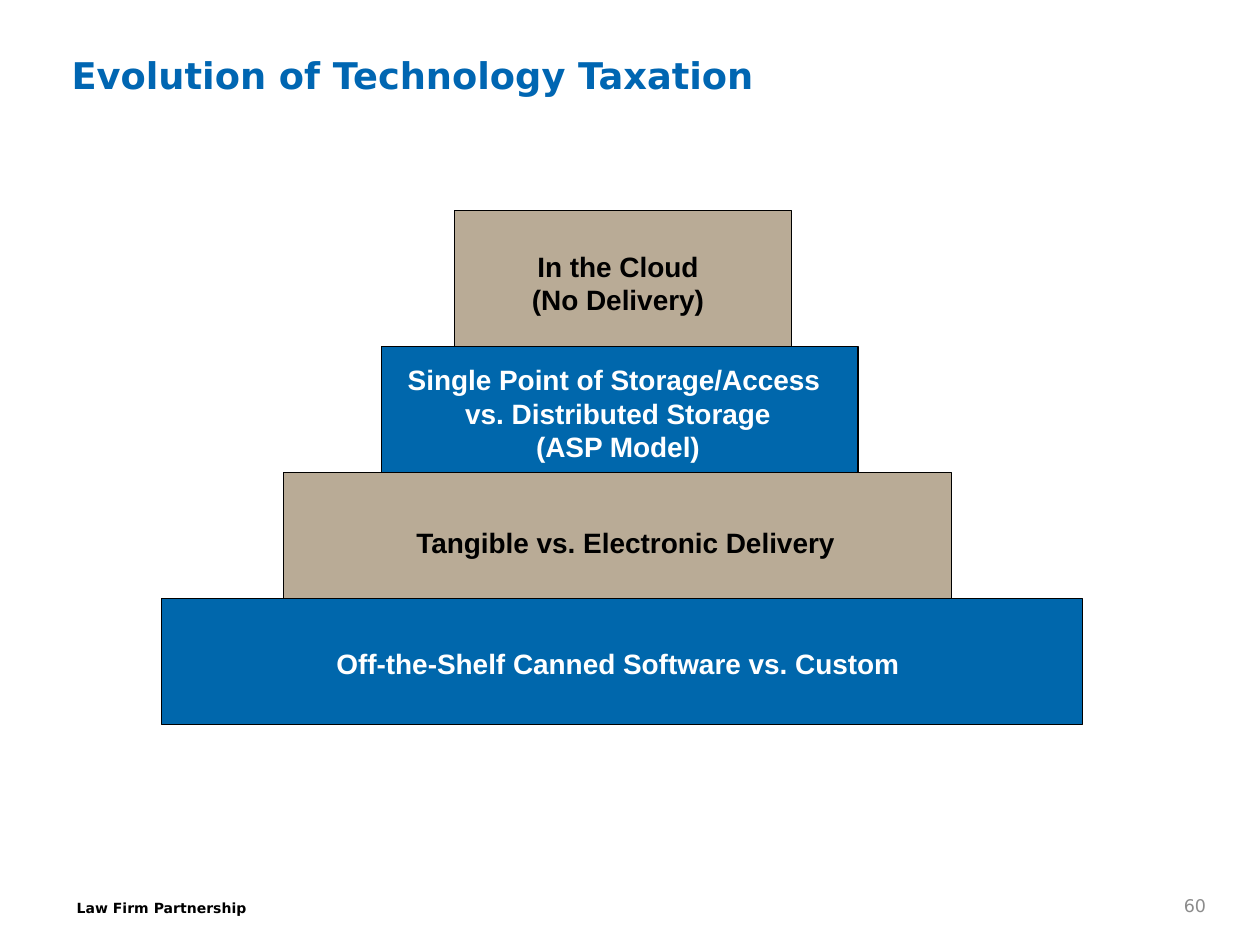
from pptx import Presentation
from pptx.dml.color import RGBColor
from pptx.enum.shapes import MSO_SHAPE
from pptx.enum.text import MSO_ANCHOR, PP_ALIGN
from pptx.util import Inches, Pt

RECTANGLE = MSO_SHAPE.RECTANGLE
TOP, MIDDLE = MSO_ANCHOR.TOP, MSO_ANCHOR.MIDDLE
LEFT, CENTER, RIGHT = PP_ALIGN.LEFT, PP_ALIGN.CENTER, PP_ALIGN.RIGHT

BLACK, WHITE, GREY = "000000", "FFFFFF", "8C8C8C"
TITLE_BLUE, STEP_BLUE, TAN = "0066B2", "0067AC", "B9AB96"


def color(value):
    return RGBColor.from_string(value)


class PageBuilder:
    heading_font = "DejaVu Sans"
    label_font = "Arial"
    label_size = 16

    def __init__(self, page):
        self.page = page

    def step(self, left, top, width, height, fill):
        box = self.page.shapes.add_shape(
            RECTANGLE, Inches(left), Inches(top), Inches(width), Inches(height))
        box.shadow.inherit = False
        box.fill.solid()
        box.fill.fore_color.rgb = color(fill)
        box.line.color.rgb = color(BLACK)
        box.line.width = Pt(0.75)

    def text(self, place, words, size, font, ink, bold=True,
             align=LEFT, anchor=TOP, spacing=None):
        box = self.page.shapes.add_textbox(*map(Inches, place))
        frame = box.text_frame
        frame.word_wrap = True
        frame.vertical_anchor = anchor
        frame.text = words
        for para in frame.paragraphs:
            para.alignment = align
            para.line_spacing = spacing
            for span in para.runs:
                span.font.name = font
                span.font.size = Pt(size)
                span.font.bold = bold
                span.font.color.rgb = color(ink)

    def label(self, place, words, ink):
        self.text(place, words, self.label_size, self.label_font, ink, align=CENTER)


def main():
    deck = Presentation()
    deck.slide_width, deck.slide_height = Inches(10), Inches(7.5)
    builder = PageBuilder(deck.slides.add_slide(deck.slide_layouts[6]))
    font = builder.heading_font

    # Title
    builder.text((0.47, 0.44, 9.06, 0.36), "Evolution of Technology Taxation",
                 21, font, TITLE_BLUE, anchor=MIDDLE, spacing=0.9)

    # Pyramid steps, top to bottom: left, width, height, fill
    top = 1.67
    for left, width, height, fill in [
        (3.61, 2.67, 1.08, TAN),
        (3.03, 3.78, 1, STEP_BLUE),
        (2.25, 5.3, 1, TAN),
        (1.28, 7.31, 1, STEP_BLUE),
    ]:
        builder.step(left, top, width, height, fill)
        top += height

    # Step labels
    for place, words, ink in [
        ((3.87, 1.93, 2.07, 0.64), "In the Cloud\n(No Delivery)", BLACK),
        ((3.13, 2.83, 3.55, 0.9),
         "Single Point of Storage/Access \nvs. Distributed Storage\n(ASP Model)", WHITE),
        ((2.92, 4.12, 4.09, 0.37), "Tangible vs. Electronic Delivery", BLACK),
        ((1.83, 5.08, 6.15, 0.37), "Off-the-Shelf Canned Software vs. Custom", WHITE),
    ]:
        builder.label(place, words, ink)

    # Footer and page number
    builder.text((0.51, 7.09, 2.31, 0.24), "Law Firm Partnership", 8, font, BLACK)
    builder.text((8.8, 7.04, 0.87, 0.3), "60", 10, font, GREY,
                 bold=False, align=RIGHT, anchor=MIDDLE)

    deck.save("out.pptx")


if __name__ == "__main__":
    main()
